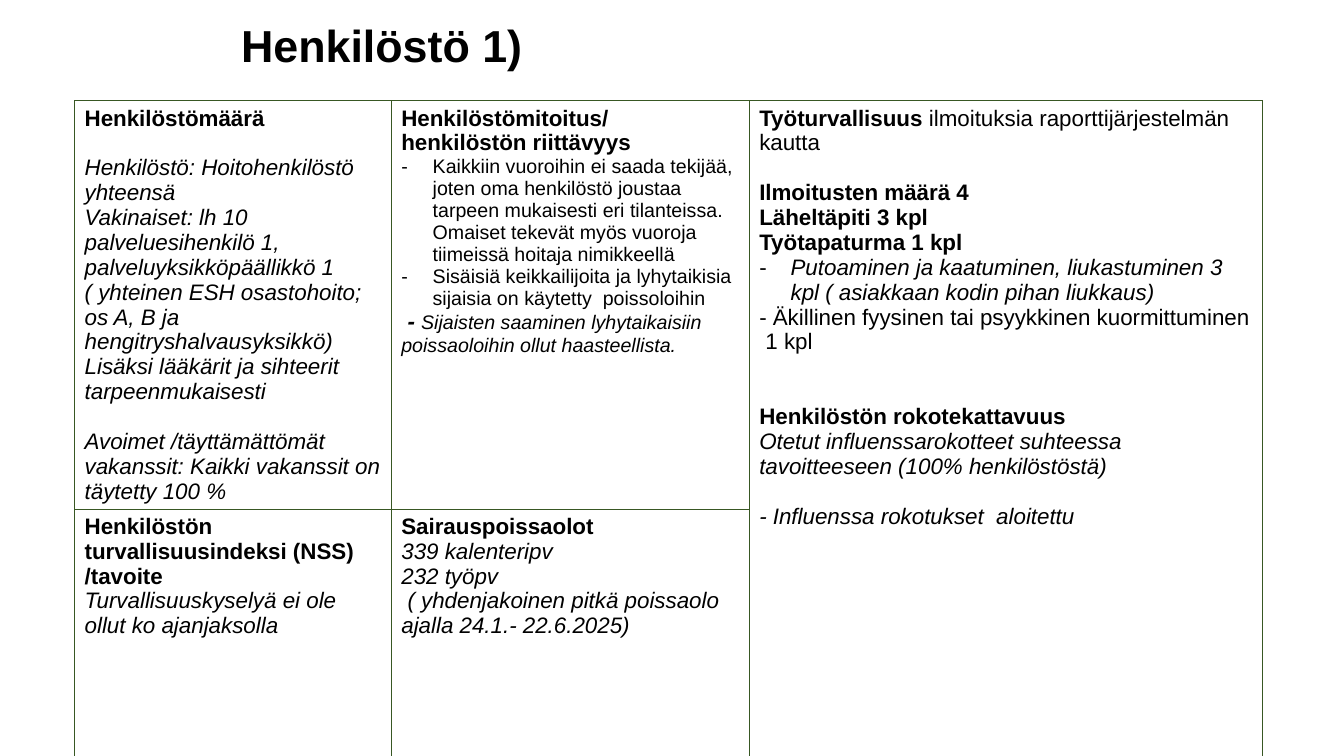
from lxml.etree import SubElement
from pptx import Presentation
from pptx.dml.color import RGBColor
from pptx.enum.text import MSO_ANCHOR, PP_ALIGN
from pptx.oxml import parse_xml
from pptx.oxml.ns import nsdecls, qn
from pptx.util import Cm, Pt

COLORS = {"text": "000000", "paper": "FFFFFF", "border": "385723"}
FONT = "Arial"
BLANK_LINE = 17.8


def line(text, style="", size=16, gap=0, bullet=False):
    """Describe a paragraph that has one run."""
    return {"runs": [(text, style, size)], "gap": gap, "bullet": bullet}


def mixed(*runs):
    """Describe a paragraph whose runs differ in style."""
    return {"runs": runs, "gap": 0, "bullet": False}


STAFF_COUNT = [
    line("Henkilöstömäärä", "b"),
    line("Henkilöstö: Hoitohenkilöstö yhteensä", "i", gap=1),
    line("Vakinaiset: lh 10 palveluesihenkilö 1, palveluyksikköpäällikkö 1 "
         "( yhteinen ESH osastohoito; os A, B ja hengitryshalvausyksikkö)", "i"),
    line("Lisäksi lääkärit ja sihteerit tarpeenmukaisesti", "i"),
    line("Avoimet /täyttämättömät vakanssit: Kaikki vakanssit on täytetty 100 %", "i", gap=1),
]
STAFFING = [
    line("Henkilöstömitoitus/", "b"),
    line("henkilöstön riittävyys", "b"),
    line("Kaikkiin vuoroihin ei saada tekijää, joten oma henkilöstö joustaa tarpeen "
         "mukaisesti eri tilanteissa. Omaiset tekevät myös vuoroja tiimeissä hoitaja "
         "nimikkeellä", size=14, bullet=True),
    line("Sisäisiä keikkailijoita ja lyhytaikisia sijaisia on käytetty  poissoloihin",
         size=14, bullet=True),
    mixed((" - ", "bi", 16),
          ("Sijaisten saaminen lyhytaikaisiin poissaoloihin ollut haasteellista.", "i", 14)),
]
SAFETY = [
    mixed(("Työturvallisuus ", "b", 16),
          ("ilmoituksia raporttijärjestelmän kautta", "", 16)),
    line("Ilmoitusten määrä 4", "b", gap=1),
    line("Läheltäpiti 3 kpl", "b"),
    line("Työtapaturma 1 kpl", "b"),
    line("Putoaminen ja kaatuminen, liukastuminen 3 kpl ( asiakkaan kodin pihan liukkaus)",
         "i", bullet=True),
    line("- Äkillinen fyysinen tai psyykkinen kuormittuminen  1 kpl"),
    line("Henkilöstön rokotekattavuus", "b", gap=2),
    line("Otetut influenssarokotteet suhteessa tavoitteeseen (100% henkilöstöstä)", "i"),
    line("- Influenssa rokotukset  aloitettu", "i", gap=1),
]
SAFETY_INDEX = [
    line("Henkilöstön turvallisuusindeksi (NSS) /tavoite", "b"),
    line("Turvallisuuskyselyä ei ole ollut ko ajanjaksolla", "i"),
]
SICK_LEAVE = [
    line("Sairauspoissaolot", "b"),
    line("339 kalenteripv", "i"),
    line("232 työpv", "i"),
    line(" ( yhdenjakoinen pitkä poissaolo ajalla 24.1.- 22.6.2025)", "i"),
]


class SlideBuilder:
    """Hold the style and the current slide."""

    def __init__(self, presentation):
        self.slide = presentation.slides.add_slide(presentation.slide_layouts[5])

    def style_run(self, run, style, size):
        """Apply font, size, weight and slant to a run."""
        font = run.font
        font.name, font.size = FONT, Pt(size)
        font.bold, font.italic = "b" in style, "i" in style
        font.color.rgb = RGBColor.from_string(COLORS["text"])

    def title(self, text, left, top, width, height):
        """Place and format the title."""
        shape = self.slide.shapes.title
        shape.left, shape.top, shape.width, shape.height = map(Cm, (left, top, width, height))
        shape.text_frame.text = text
        shape.text_frame.vertical_anchor = MSO_ANCHOR.MIDDLE
        paragraph = shape.text_frame.paragraphs[0]
        paragraph.alignment = PP_ALIGN.LEFT
        paragraph.line_spacing = 0.9
        self.style_run(paragraph.runs[0], "b", 32)

    def fill_paragraph(self, paragraph, content):
        """Write the runs of a paragraph and set its bullet and spacing."""
        paragraph.space_before = Pt(content["gap"] * BLANK_LINE)
        if content["bullet"]:
            properties = paragraph._p.get_or_add_pPr()
            properties.set("marL", str(Cm(0.79)))
            properties.set("indent", str(-Cm(0.79)))
            SubElement(properties, qn("a:buFont"), typeface=FONT)
            SubElement(properties, qn("a:buChar"), char="-")
        first, *others = content["runs"]
        paragraph.text = first[0]
        for text, _, _ in others:
            paragraph.add_run().text = text
        for run, (_, style, size) in zip(paragraph.runs, content["runs"]):
            self.style_run(run, style, size)

    def fill_cell(self, cell, contents):
        """Write all paragraphs of a cell."""
        frame = cell.text_frame
        for index, content in enumerate(contents):
            paragraph = frame.add_paragraph() if index else frame.paragraphs[0]
            self.fill_paragraph(paragraph, content)

    def frame_cell(self, cell):
        """Give a cell its fill and four borders."""
        cell.fill.solid()
        cell.fill.fore_color.rgb = RGBColor.from_string(COLORS["paper"])
        properties = cell._tc.get_or_add_tcPr()
        for index, side in enumerate(("lnL", "lnR", "lnT", "lnB")):
            properties.insert(index, parse_xml(
                f'<a:{side} {nsdecls("a")} w="{Pt(1)}"><a:solidFill>'
                f'<a:srgbClr val="{COLORS["border"]}"/></a:solidFill></a:{side}>'))

    def table(self, left, top, widths, heights, cells):
        """Add a bordered table from a mapping of positions to contents."""
        graphic = self.slide.shapes.add_table(
            len(heights), len(widths), Cm(left), Cm(top), Cm(sum(widths)), Cm(sum(heights)))
        table = graphic.table
        table.first_row = table.horz_banding = False
        for column, width in zip(table.columns, widths):
            column.width = Cm(width)
        for row, height in zip(table.rows, heights):
            row.height = Cm(height)
        for cell in table.iter_cells():
            self.frame_cell(cell)
        for (row, column), contents in cells.items():
            self.fill_cell(table.cell(row, column), contents)
        return table


def main():
    """Build and save the presentation."""
    presentation = Presentation()
    presentation.slide_width, presentation.slide_height = Cm(33.87), Cm(19.05)
    builder = SlideBuilder(presentation)
    builder.title("Henkilöstö 1)", 5.82, 0.38, 23.57, 1.65)
    table = builder.table(1.88, 2.54, (7.98, 9.02, 12.93), (6.83, 9.02), {
        (0, 0): STAFF_COUNT,
        (0, 1): STAFFING,
        (0, 2): SAFETY,
        (1, 0): SAFETY_INDEX,
        (1, 1): SICK_LEAVE,
    })
    table.cell(0, 2).merge(table.cell(1, 2))
    presentation.save("out.pptx")


if __name__ == "__main__":
    main()
